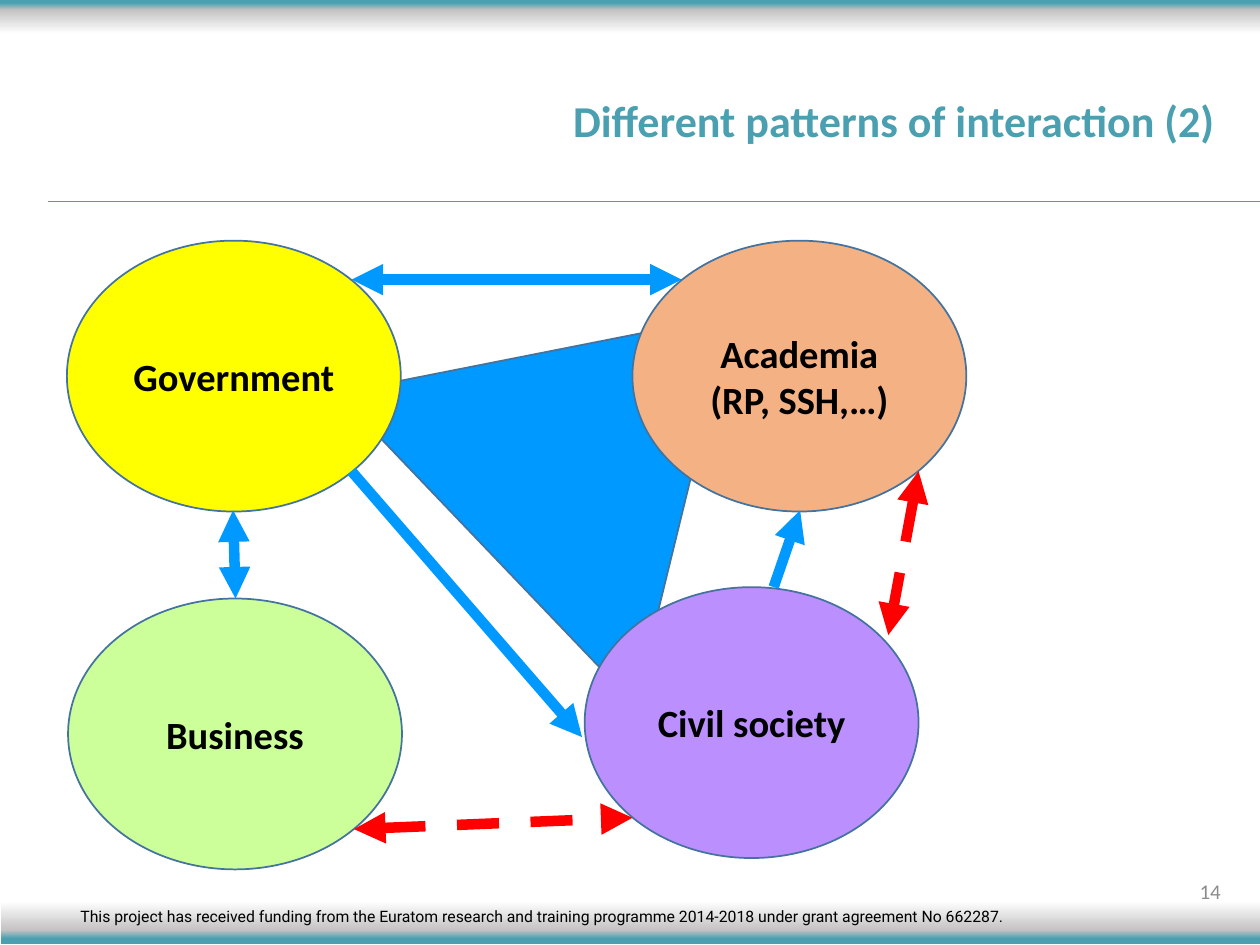
from lxml.etree import SubElement
from pptx import Presentation
from pptx.dml.color import RGBColor
from pptx.enum.dml import MSO_LINE_DASH_STYLE as Dash
from pptx.enum.shapes import MSO_CONNECTOR as Connector, MSO_SHAPE as Shape
from pptx.enum.text import MSO_ANCHOR as Anchor, MSO_AUTO_SIZE as AutoSize, PP_ALIGN as Align
from pptx.oxml import parse_xml
from pptx.oxml.ns import nsdecls, qn
from pptx.util import Pt

TEAL = RGBColor(0x4A, 0xA0, 0xB1)
SILVER = RGBColor(0xC5, 0xC3, 0xC3)
WHITE = RGBColor(0xFF, 0xFF, 0xFF)
BLACK = RGBColor(0, 0, 0)
GRAY = RGBColor(0x8C, 0x8C, 0x8C)
BLUE = RGBColor(0x00, 0x99, 0xFF)
RED = RGBColor(0xFF, 0, 0)
OUTLINE = RGBColor(0x43, 0x73, 0x9E)
YELLOW = RGBColor(0xFF, 0xFF, 0)
GREEN = RGBColor(0xCC, 0xFF, 0x99)
PURPLE = RGBColor(0xBC, 0x8F, 0xFF)
ORANGE = RGBColor(0xF4, 0xB1, 0x83)

# Content; all lengths in points
TITLE = "Different patterns of interaction (2)"
FUNDING = ("This project has received funding from the Euratom research and training "
           "programme 2014-2018 under grant agreement No 662287.")
PAGE_NUMBER = "14"

BAR_STOPS = [(12, TEAL), (32, SILVER), (99, WHITE)]
BARS = [  # box, gradient angle
    ((0.7, 514.8, 720.7, 24.5), 270),
    ((-0.7, -0.7, 720.7, 20.2), 90),
]
TRIANGLE_BOX, TRIANGLE_ROTATION = (224.6, 150.5, 246.2, 193), 46.3
ACTOR_SIZE = (190.8, 154.8)
ACTORS = [  # name, left, top, fill
    ("Government", 38.2, 137.5, YELLOW),
    ("Business", 38.9, 342, GREEN),
    ("Civil society", 334.1, 335.5, PURPLE),
    ("Academia (RP, SSH,…)", 361.4, 137.5, ORANGE),
]
BOTH, START, END = ("headEnd", "tailEnd"), ("headEnd",), ("tailEnd",)
ARROWS = [  # start, end, colour, dash, arrowheads
    ((200.9, 159.8), (389.5, 159.8), BLUE, None, BOTH),
    ((200.9, 269.3), (332.6, 421.2), BLUE, None, END),
    ((202.3, 473.8), (361.4, 467.3), RED, Dash.DASH, BOTH),
    ((524.9, 269.3), (507.6, 362.9), RED, Dash.DASH, BOTH),
    ((457.2, 291.6), (442.1, 335.5), BLUE, None, START),
    ((133.2, 291.6), (134.6, 342), BLUE, None, BOTH),
]


def points(values):
    return [Pt(value) for value in values]


def write(shape, text, color, align, anchor=Anchor.MIDDLE, **font_format):
    frame = shape.text_frame
    frame.word_wrap = True
    frame.auto_size = AutoSize.NONE
    frame.vertical_anchor = anchor
    paragraph = frame.paragraphs[0]
    paragraph.alignment = align
    run = paragraph.add_run()
    run.text = text
    for name, value in {"name": "Calibri", **font_format}.items():
        setattr(run.font, name, value)
    run.font.color.rgb = color
    return paragraph


def add_filled(slide, kind, box, color):
    shape = slide.shapes.add_shape(kind, *points(box))
    shape.shadow.inherit = False
    shape.fill.solid()
    shape.fill.fore_color.rgb = color
    shape.line.color.rgb = OUTLINE
    shape.line.width = Pt(1)
    return shape


def add_bar(slide, box, angle):
    bar = add_filled(slide, Shape.RECTANGLE, box, WHITE)
    bar.line.fill.background()
    stops = "".join(f'<a:gs pos="{position * 1000}"><a:srgbClr val="{color}"/></a:gs>'
                    for position, color in BAR_STOPS)
    gradient = parse_xml(f'<a:gradFill {nsdecls("a")} rotWithShape="1"><a:gsLst>{stops}</a:gsLst>'
                         f'<a:lin ang="{angle * 60000}" scaled="0"/></a:gradFill>')
    properties = bar.fill._xPr
    properties.replace(properties.find(qn("a:solidFill")), gradient)


def add_line(slide, start, end, color, width, dash=None, heads=()):
    connector = slide.shapes.add_connector(Connector.STRAIGHT, *points(start + end))
    line = connector.line
    line.color.rgb = color
    line.width = Pt(width)
    if dash:
        line.dash_style = dash
    for head in heads:
        SubElement(line._get_or_add_ln(), qn(f"a:{head}"), type="triangle")
    SubElement(connector._element.spPr, qn("a:effectLst"))


def main():
    presentation = Presentation()
    presentation.slide_width, presentation.slide_height = Pt(720), Pt(540)
    slide = presentation.slides.add_slide(presentation.slide_layouts[5])

    # Frame: bars, funding note, rule under the title
    for box, angle in BARS:
        add_bar(slide, box, angle)
    note = slide.shapes.add_textbox(*points((38.9, 514.8, 631.4, 25)))
    write(note, FUNDING, BLACK, Align.LEFT, Anchor.TOP, name="Roboto", size=Pt(9))
    add_line(slide, (720, 115.2), (27.7, 115.2), TEAL, 1)

    # Title and page number
    title = slide.shapes.title
    title.left, title.top, title.width, title.height = points((316.8, 41, 384.5, 58.3))
    write(title, TITLE, TEAL, Align.RIGHT, size=Pt(25.2), bold=True).line_spacing = 0.9
    number = slide.shapes.add_textbox(*points((606.2, 494.6, 98.6, 28.8)))
    write(number, PAGE_NUMBER, GRAY, Align.RIGHT, size=Pt(12))

    # Shared triangle behind the actors
    triangle = add_filled(slide, Shape.ISOSCELES_TRIANGLE, TRIANGLE_BOX, BLUE)
    triangle.rotation = TRIANGLE_ROTATION

    # Actors and their interactions
    for name, left, top, color in ACTORS:
        actor = add_filled(slide, Shape.OVAL, (left, top, *ACTOR_SIZE), color)
        write(actor, name, BLACK, Align.CENTER, size=Pt(22), bold=True)
    for start, end, color, dash, heads in ARROWS:
        add_line(slide, start, end, color, 6, dash, heads)

    presentation.save("out.pptx")


if __name__ == "__main__":
    main()
